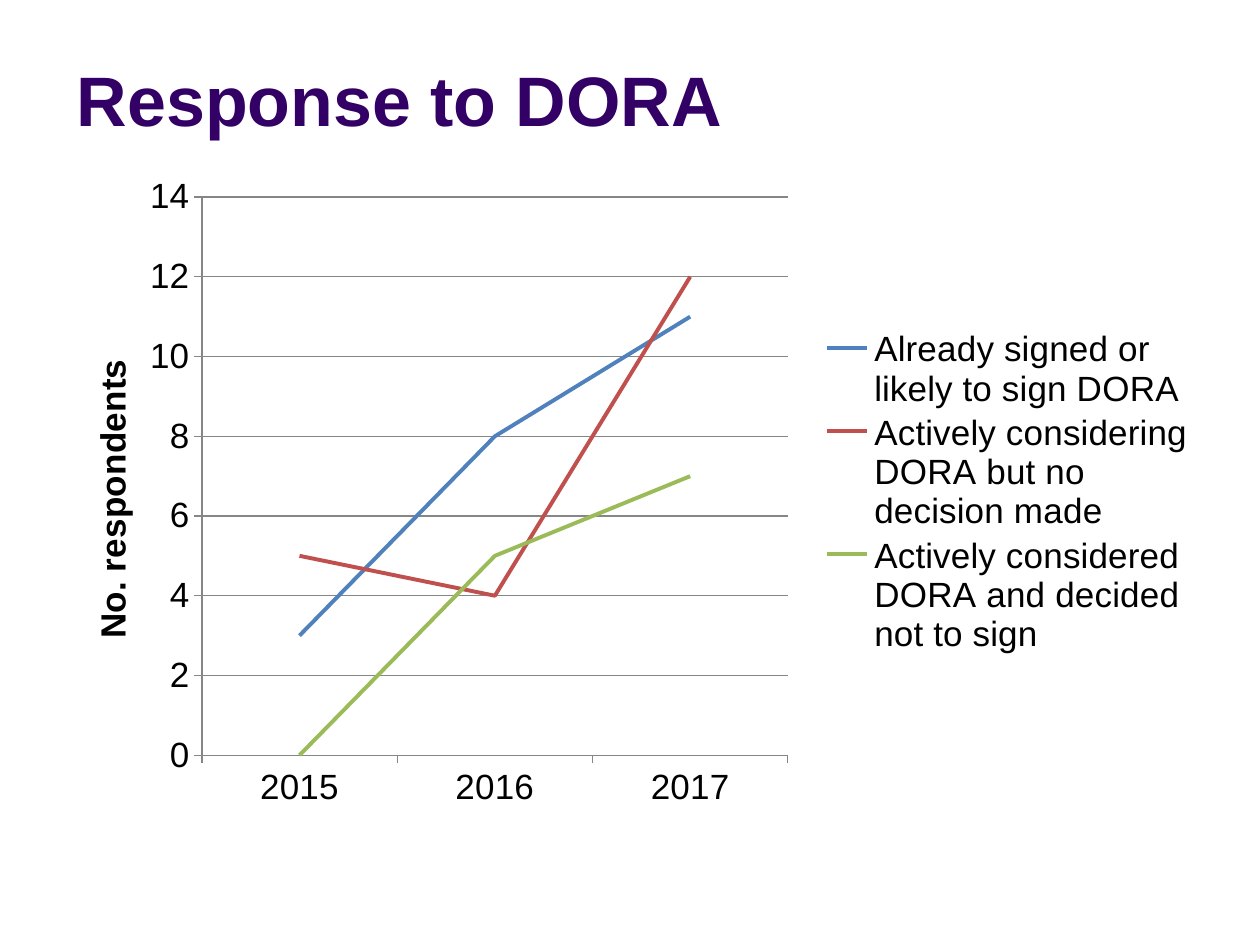
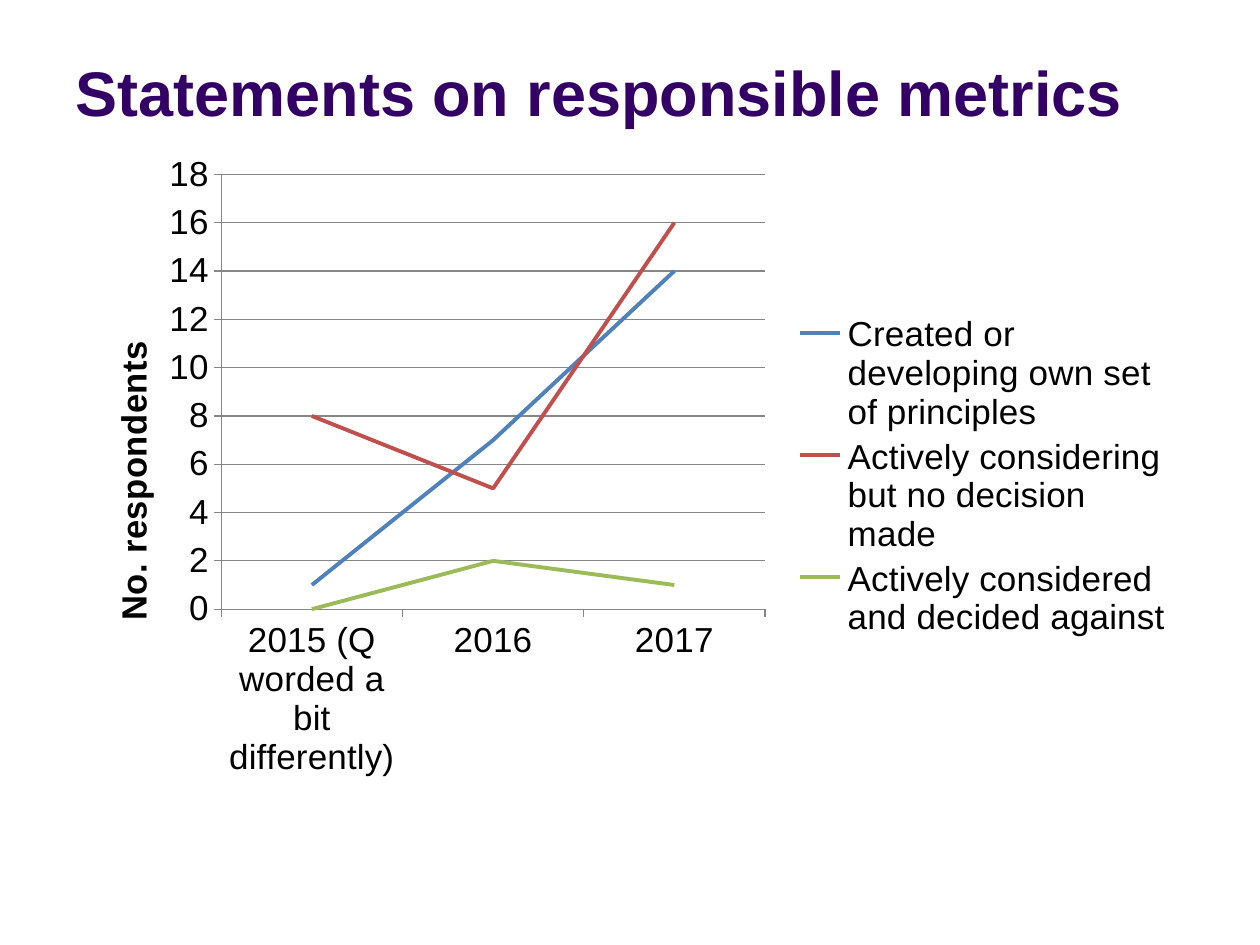
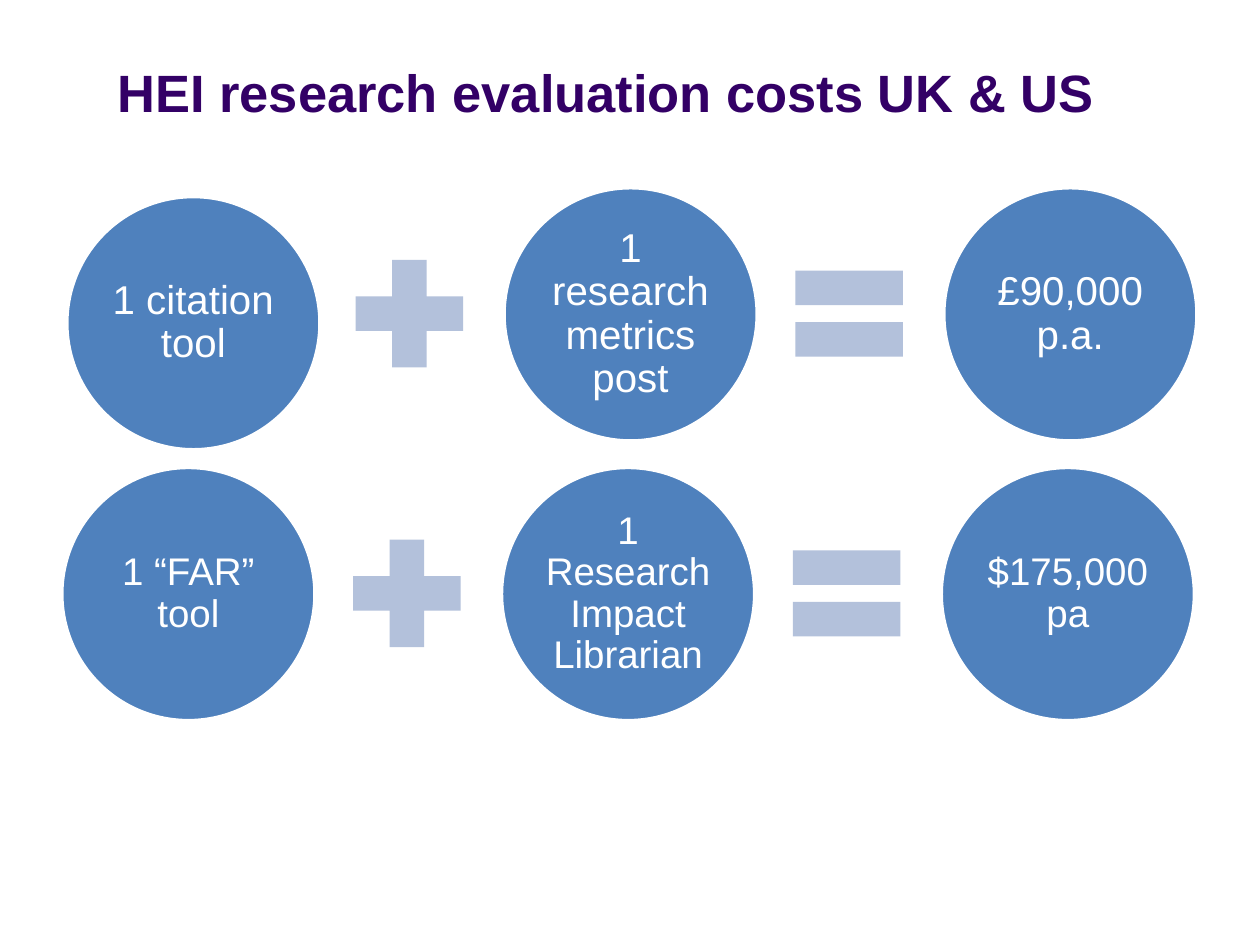
from lxml.etree import SubElement
from pptx import Presentation
from pptx.chart.data import CategoryChartData
from pptx.dml.color import RGBColor
from pptx.enum.chart import XL_CHART_TYPE, XL_LEGEND_POSITION, XL_TICK_MARK
from pptx.enum.shapes import MSO_SHAPE
from pptx.enum.text import MSO_ANCHOR, PP_ALIGN
from pptx.oxml.ns import qn
from pptx.util import Inches, Pt

FONT = "Arial"
PURPLE, BLACK, WHITE, GREY = "330066", "000000", "FFFFFF", "868686"
BLUE, RED, GREEN, PALE_BLUE = "4F81BD", "C0504D", "9BBB59", "B3C1DB"
SERIES_COLORS = (BLUE, RED, GREEN)

CIRCLE, OPERATOR = 2.01, 1.16
COLUMN_PITCH = 3.49
OPERATOR_DX, OPERATOR_DY = 2.16, 0.42
OPERATORS = (MSO_SHAPE.MATH_PLUS, MSO_SHAPE.MATH_EQUAL)


def rgb(color):
    return RGBColor.from_string(color)


def inches(*lengths):
    return [Inches(length) for length in lengths]


def style(font, size, color, bold=False):
    font.name, font.size, font.bold = FONT, Pt(size), bold
    font.color.rgb = rgb(color)


def add_titled_slide(deck, text, box, size, align=PP_ALIGN.LEFT):
    slide = deck.slides.add_slide(deck.slide_layouts[5])
    title = slide.shapes.title
    title.left, title.top, title.width, title.height = inches(*box)
    frame = title.text_frame
    frame.text = text
    frame.vertical_anchor = MSO_ANCHOR.MIDDLE
    paragraph = frame.paragraphs[0]
    paragraph.alignment = align
    style(paragraph.font, size, PURPLE, bold=True)
    return slide


def set_layout(part, index, inner=False, **shares):
    """Fix a chart part's place, given as shares of the chart's size."""
    for old in part.findall(qn("c:layout")):
        part.remove(old)
    layout = part.makeelement(qn("c:layout"))
    part.insert(index, layout)
    manual = SubElement(layout, qn("c:manualLayout"))
    settings = {"layoutTarget": "inner"} if inner else {}
    settings.update(xMode="edge", yMode="edge", **shares)
    for tag, value in settings.items():
        SubElement(manual, qn(f"c:{tag}")).set("val", str(value))


def style_axis(axis):
    axis.major_tick_mark = XL_TICK_MARK.OUTSIDE
    axis.minor_tick_mark = XL_TICK_MARK.NONE
    style(axis.tick_labels.font, 20, BLACK)
    axis.format.line.color.rgb = rgb(GREY)
    axis.format.line.width = Pt(0.75)


def add_value_axis(axis, maximum, title_place):
    style_axis(axis)
    axis.minimum_scale, axis.maximum_scale, axis.major_unit = 0, maximum, 2
    axis.major_gridlines.format.line.color.rgb = rgb(GREY)
    axis.major_gridlines.format.line.width = Pt(0.75)
    title = axis.axis_title
    title.text_frame.text = "No. respondents"
    style(title.text_frame.paragraphs[0].runs[0].font, 20, BLACK, bold=True)
    body = title._element.find(".//" + qn("a:bodyPr"))
    body.set("rot", "-5400000")
    body.set("vert", "horz")
    set_layout(title._element, 1, **title_place)


def add_response_chart(slide, box, years, responses, maximum,
                       plot_place, legend_place, title_place):
    data = CategoryChartData()
    data.categories = years
    for answer, counts in responses.items():
        data.add_series(answer, counts)
    chart = slide.shapes.add_chart(XL_CHART_TYPE.LINE, *inches(*box), data).chart
    style(chart.font, 10, BLACK)
    chart.has_title = False
    chart.plots[0].vary_by_categories = False
    for series, color in zip(chart.plots[0].series, SERIES_COLORS):
        series.smooth = False
        series.format.line.color.rgb = rgb(color)
        series.format.line.width = Pt(2.25)
    style_axis(chart.category_axis)
    add_value_axis(chart.value_axis, maximum, title_place)
    chart.has_legend = True
    legend = chart.legend
    legend.position = XL_LEGEND_POSITION.RIGHT
    legend.include_in_layout = False
    style(legend.font, 20, BLACK)
    set_layout(legend._element, 1, **legend_place)
    set_layout(chart._chartSpace.chart.plotArea, 0, inner=True, **plot_place)


def add_flat_shape(slide, kind, left, top, size, fill):
    shape = slide.shapes.add_shape(kind, *inches(left, top, size, size))
    shape.shadow.inherit = False
    shape.fill.solid()
    shape.fill.fore_color.rgb = rgb(fill)
    shape.line.fill.background()
    return shape


def add_cost_circle(slide, left, top, text, size):
    circle = add_flat_shape(slide, MSO_SHAPE.OVAL, left, top, CIRCLE, BLUE)
    circle.line.color.rgb = rgb(WHITE)
    circle.line.width = Pt(2)
    frame = circle.text_frame
    frame.word_wrap = True
    frame.vertical_anchor = MSO_ANCHOR.MIDDLE
    frame.margin_left = frame.margin_right = Inches(0.03)
    frame.margin_top = frame.margin_bottom = Inches(0.03)
    frame.text = text
    paragraph = frame.paragraphs[0]
    paragraph.alignment = PP_ALIGN.CENTER
    paragraph.line_spacing = 0.9
    style(paragraph.font, size, WHITE)


def add_cost_equation(slide, left, top, terms, size, first_shift=(0, 0)):
    """Draw tool + post = cost; first_shift moves the first circle."""
    for column, term in enumerate(terms):
        dx, dy = first_shift if column == 0 else (0, 0)
        x = left + column * COLUMN_PITCH
        add_cost_circle(slide, x + dx, top + dy, term, size)
        if column < len(OPERATORS):
            add_flat_shape(slide, OPERATORS[column], x + OPERATOR_DX,
                           top + OPERATOR_DY, OPERATOR, PALE_BLUE)


def main():
    deck = Presentation()
    deck.slide_width, deck.slide_height = inches(10, 7.5)

    dora = add_titled_slide(deck, "Response to DORA", (0.51, 0.36, 9, 0.85), 40)
    add_response_chart(
        dora, (0.35, 1.31, 9.21, 5.2), ("2015", "2016", "2017"),
        {"Already signed or likely to sign DORA": (3, 8, 11),
         "Actively considering DORA but no decision made": (5, 4, 12),
         "Actively considered DORA and decided not to sign": (0, 5, 7)},
        maximum=14,
        plot_place=dict(x=0.136, y=0.049, w=0.505, h=0.852),
        legend_place=dict(x=0.665, y=0.245, w=0.33, h=0.51),
        title_place=dict(x=0.034, y=0.287))

    metrics = add_titled_slide(deck, "Statements on responsible metrics",
                               (0.5, 0.3, 9, 0.85), 36)
    add_response_chart(
        metrics, (0.51, 1.23, 8.9, 5.04),
        ("2015 (Q worded a bit differently)", "2016", "2017"),
        {"Created or developing own set of principles": (1, 7, 14),
         "Actively considering but no decision made": (8, 5, 16),
         "Actively considered and decided against": (0, 2, 1)},
        maximum=18,
        plot_place=dict(x=0.14, y=0.019, w=0.485, h=0.693),
        legend_place=dict(x=0.649, y=0.236, w=0.34, h=0.53),
        title_place=dict(x=0.036, y=0.28))

    costs = add_titled_slide(deck, "HEI research evaluation costs UK & US",
                             (0.12, 0.3, 9.38, 0.85), 30, PP_ALIGN.CENTER)
    add_cost_equation(costs, 0.51, 1.49,
                      ("1 citation tool", "1 research metrics post", "£90,000 p.a."),
                      23, first_shift=(0.02, 0.07))
    add_cost_equation(costs, 0.49, 3.71,
                      ("1 “FAR” tool", "1 Research Impact Librarian", "$175,000 pa"), 22)

    deck.save("out.pptx")


if __name__ == "__main__":
    main()
